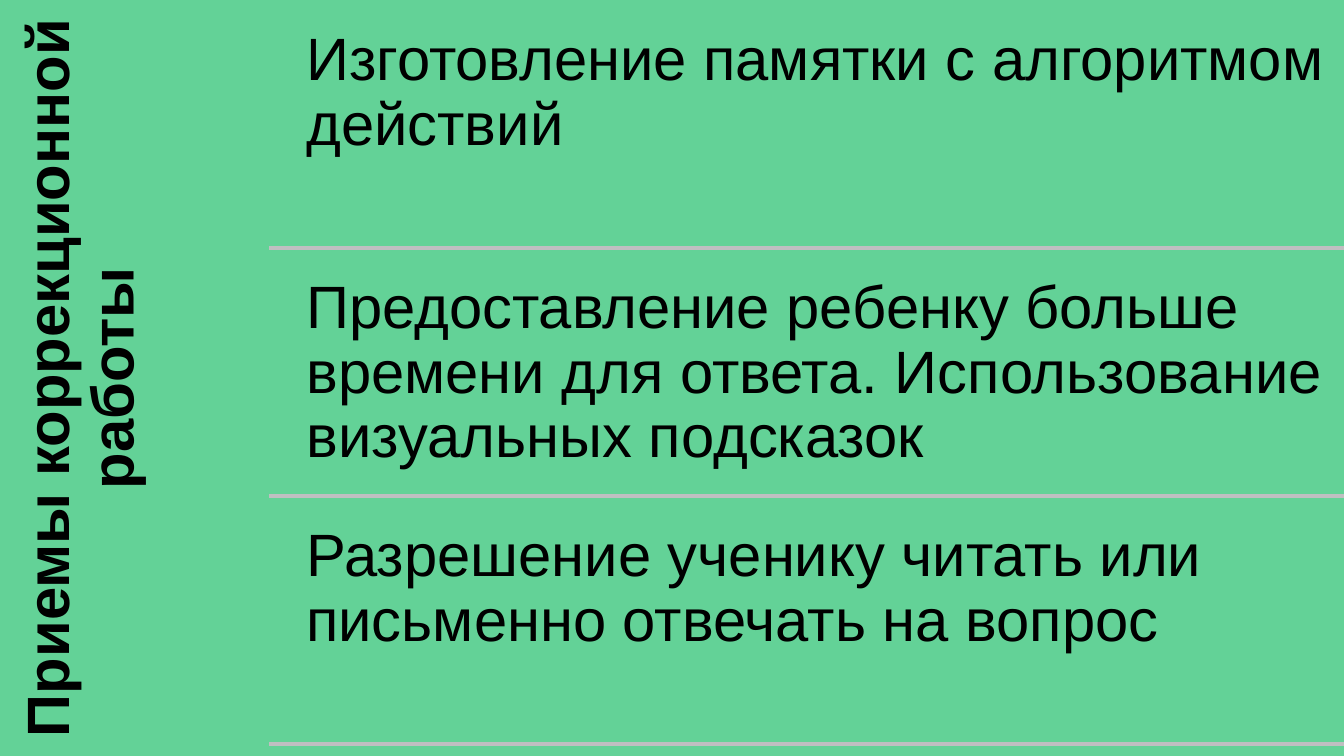
from lxml import etree
from pptx import Presentation
from pptx.dml.color import RGBColor
from pptx.enum.shapes import MSO_CONNECTOR
from pptx.enum.text import MSO_ANCHOR, PP_ALIGN
from pptx.oxml.ns import qn
from pptx.util import Cm, Pt

STRAIGHT = MSO_CONNECTOR.STRAIGHT
TOP = MSO_ANCHOR.TOP
LEFT, CENTER = PP_ALIGN.LEFT, PP_ALIGN.CENTER

COLORS = {"background": "63D297", "text": "000000", "divider": "BFBFC1"}
HEADING = "Приемы коррекционной работы"
METHODS = [
    "Изготовление памятки с алгоритмом действий",
    "Предоставление ребенку больше времени для ответа. Использование визуальных подсказок",
    "Разрешение ученику читать или письменно отвечать на вопрос",
]

PAGE_WIDTH, PAGE_HEIGHT = 25.4, 14.29
HEADING_WIDTH = 5.08
METHOD_LEFT = 5.46
METHOD_HEIGHT = 4.47
GAP = 0.22
ROW_PITCH = METHOD_HEIGHT + GAP


def add_text(page, text, left, top, width, height, align=LEFT, bold=False):
    box = page.shapes.add_textbox(Cm(left), Cm(top), Cm(width), Cm(height))
    frame = box.text_frame
    frame.word_wrap = True
    frame.vertical_anchor = TOP
    frame.margin_left = frame.margin_right = Cm(0.33)
    frame.margin_top = frame.margin_bottom = Cm(0.33)
    para = frame.paragraphs[0]
    para.alignment = align
    para.line_spacing = 0.9
    span = para.add_run()
    span.text = text
    span.font.name = "Arial"
    span.font.size = Pt(32)
    span.font.bold = bold
    span.font.color.rgb = RGBColor.from_string(COLORS["text"])
    return box


deck = Presentation()
deck.slide_width = Cm(PAGE_WIDTH)
deck.slide_height = Cm(PAGE_HEIGHT)
page = deck.slides.add_slide(deck.slide_layouts[6])
page.background.fill.solid()
page.background.fill.fore_color.rgb = RGBColor.from_string(COLORS["background"])

heading = add_text(page, HEADING, 0, 0, HEADING_WIDTH, PAGE_HEIGHT, CENTER, True)
heading.text_frame._txBody.bodyPr.set("vert", "vert270")

for row, method in enumerate(METHODS):
    top = GAP + row * ROW_PITCH
    bottom = top + METHOD_HEIGHT
    add_text(page, method, METHOD_LEFT, top, PAGE_WIDTH - METHOD_LEFT, METHOD_HEIGHT)
    divider = page.shapes.add_connector(
        STRAIGHT, Cm(HEADING_WIDTH), Cm(bottom), Cm(PAGE_WIDTH), Cm(bottom)
    )
    divider.line.color.rgb = RGBColor.from_string(COLORS["divider"])
    divider.line.width = Pt(2)
    etree.SubElement(divider._element.spPr, qn("a:effectLst"))

deck.save("out.pptx")
